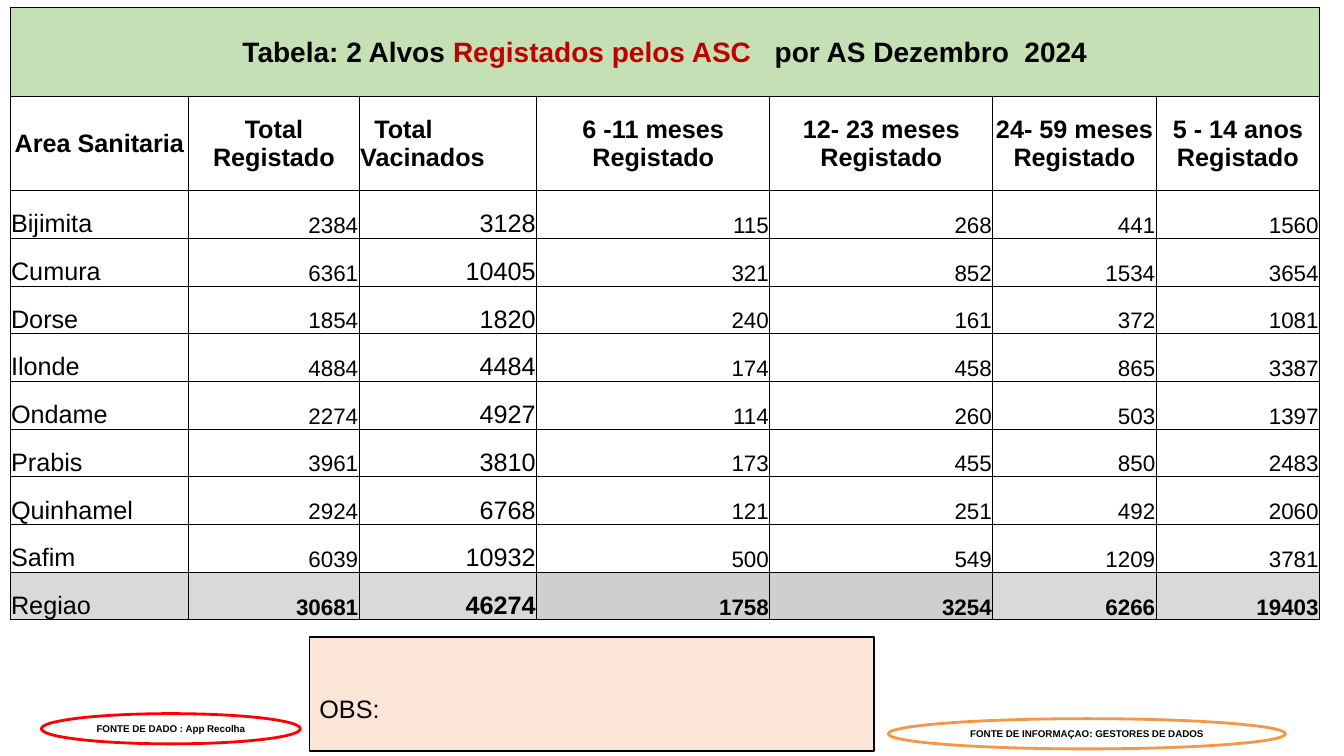
from lxml.etree import SubElement
from pptx import Presentation
from pptx.dml.color import RGBColor
from pptx.enum.shapes import MSO_SHAPE as Shape
from pptx.enum.text import MSO_ANCHOR as Anchor, PP_ALIGN as Align
from pptx.oxml.ns import qn
from pptx.util import Inches, Pt

COLORS = {
    "black": "000000", "white": "FFFFFF", "title": "C5E0B4", "accent": "C00000",
    "total": "D9D9D9", "total_age": "D0CECE", "note": "FBE5D6",
    "data_source": "FF0000", "info_source": "F79646",
}
COLUMN_WIDTHS = [1.77, 1.69, 1.76, 2.31, 2.21, 1.62, 1.62]
TITLE_HEIGHT, HEADER_HEIGHT = 0.89, 0.93
TITLE = [("Tabela: 2 Alvos ", "black"), ("Registados pelos ASC ", "accent"),
         ("  por AS Dezembro  2024", "black")]
HEADERS = ["Area Sanitaria", "Total Registado", "Total Vacinados", "6 -11 meses Registado",
           "12- 23 meses Registado", "24- 59 meses Registado", "5 - 14 anos Registado"]
AREAS = [
    ("Bijimita", 2384, 3128, 115, 268, 441, 1560),
    ("Cumura", 6361, 10405, 321, 852, 1534, 3654),
    ("Dorse", 1854, 1820, 240, 161, 372, 1081),
    ("Ilonde", 4884, 4484, 174, 458, 865, 3387),
    ("Ondame", 2274, 4927, 114, 260, 503, 1397),
    ("Prabis", 3961, 3810, 173, 455, 850, 2483),
    ("Quinhamel", 2924, 6768, 121, 251, 492, 2060),
    ("Safim", 6039, 10932, 500, 549, 1209, 3781),
    ("Regiao", 30681, 46274, 1758, 3254, 6266, 19403),
]


def rgb(name):
    """Return the named palette colour."""
    return RGBColor.from_string(COLORS[name])


def write(frame, runs, size=18, bold=False, align=Align.LEFT, indent=0):
    """Fill a frame's paragraph with (text, colour) runs or one black text."""
    para = frame.paragraphs[0]
    para.alignment = align
    if indent:
        properties = para._p.get_or_add_pPr()
        properties.set("marL", "0")
        properties.set("indent", str(Inches(indent)))
    for text, color in [(runs, "black")] if isinstance(runs, str) else runs:
        span = para.add_run()
        span.text = text
        span.font.name = "Arial"
        span.font.size = Pt(size)
        span.font.bold = bold
        span.font.color.rgb = rgb(color)


def style_cell(cell, fill, anchor):
    """Give a cell its fill, tight margins and thin black borders."""
    cell.fill.solid()
    cell.fill.fore_color.rgb = rgb(fill)
    cell.vertical_anchor = anchor
    cell.margin_left = cell.margin_right = cell.margin_top = Inches(0.01)
    cell.margin_bottom = 0
    properties = cell._tc.get_or_add_tcPr()
    for position, side in enumerate(("lnL", "lnR", "lnT", "lnB")):
        border = SubElement(properties, qn(f"a:{side}"), w=str(Pt(0.5)))
        solid = SubElement(border, qn("a:solidFill"))
        SubElement(solid, qn("a:srgbClr"), val=COLORS["black"])
        properties.insert(position, border)


def add_targets_table(page, left, top, width, height):
    """Place the title, header, area and total rows as one table."""
    box = map(Inches, (left, top, width, height))
    table = page.shapes.add_table(len(AREAS) + 2, len(HEADERS), *box).table
    table.first_row = table.horz_banding = False
    for column, share in zip(table.columns, COLUMN_WIDTHS):
        column.width = Inches(width * share / sum(COLUMN_WIDTHS))
    area_height = (height - TITLE_HEIGHT - HEADER_HEIGHT) / len(AREAS)
    heights = [TITLE_HEIGHT, HEADER_HEIGHT] + [area_height] * len(AREAS)
    for row, row_height in zip(table.rows, heights):
        row.height = Inches(row_height)

    for column, header in enumerate(HEADERS):
        style_cell(table.cell(0, column), "title", Anchor.MIDDLE)
        cell = table.cell(1, column)
        style_cell(cell, "white", Anchor.MIDDLE)
        vaccinated = column == 2
        write(cell.text_frame, header, bold=True, indent=0.14 if vaccinated else 0,
              align=Align.LEFT if vaccinated else Align.CENTER)
    table.cell(0, 0).merge(table.cell(0, len(HEADERS) - 1))
    write(table.cell(0, 0).text_frame, TITLE, size=20, bold=True, align=Align.CENTER)

    for row, area in enumerate(AREAS, start=2):
        is_total = area is AREAS[-1]
        for column, value in enumerate(area):
            cell = table.cell(row, column)
            total_fill = "total_age" if column in (3, 4) else "total"
            style_cell(cell, total_fill if is_total else "white", Anchor.BOTTOM)
            write(cell.text_frame, str(value), size=18 if column in (0, 2) else 16,
                  bold=is_total and column > 0, align=Align.RIGHT if column else Align.LEFT)


def add_panel(page, kind, box, fill, line, weight):
    """Place a flat outlined shape and return it."""
    panel = page.shapes.add_shape(kind, *map(Inches, box))
    panel.shadow.inherit = False
    if fill:
        panel.fill.solid()
        panel.fill.fore_color.rgb = rgb(fill)
    else:
        panel.fill.background()
    panel.line.color.rgb = rgb(line)
    panel.line.width = Pt(weight)
    panel.text_frame.word_wrap = True
    return panel


def add_source(page, text, box, line, fill=None):
    """Place an oval naming a source."""
    oval = add_panel(page, Shape.OVAL, box, fill, line, 2)
    oval.text_frame.vertical_anchor = Anchor.MIDDLE
    write(oval.text_frame, text, size=7, bold=True, align=Align.CENTER)


def add_note(page, box):
    """Place the box for observations."""
    note = add_panel(page, Shape.RECTANGLE, box, "note", "black", 1)
    note.text_frame.vertical_anchor = Anchor.BOTTOM
    note.text_frame.margin_bottom = Inches(0.27)
    write(note.text_frame, "OBS:")


def main():
    """Build and save the slide."""
    deck = Presentation()
    deck.slide_width, deck.slide_height = Inches(13.33), Inches(7.5)
    page = deck.slides.add_slide(deck.slide_layouts[6])
    add_targets_table(page, 0.1, 0.07, 12.99, 6.08)
    add_source(page, "FONTE DE DADO : App Recolha", (0.41, 7.08, 2.57, 0.3), "data_source")
    add_source(page, "FONTE DE INFORMAÇAO: GESTORES DE DADOS", (8.81, 7.13, 3.94, 0.3),
               "info_source", fill="white")
    add_note(page, (3.07, 6.32, 5.6, 1.13))
    deck.save("out.pptx")


if __name__ == "__main__":
    main()
